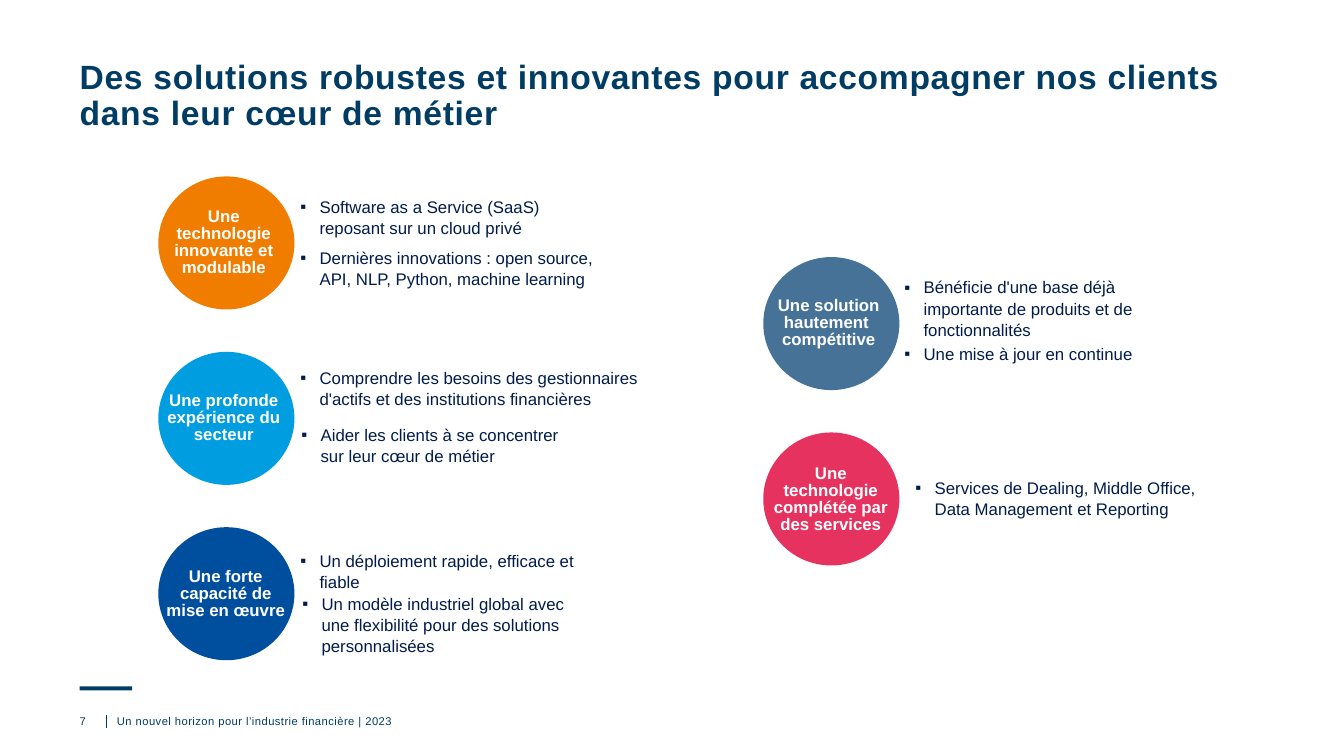
from lxml import etree
from pptx import Presentation
from pptx.dml.color import RGBColor
from pptx.enum.shapes import MSO_CONNECTOR, MSO_SHAPE
from pptx.enum.text import MSO_ANCHOR, PP_ALIGN
from pptx.oxml.ns import qn
from pptx.util import Inches, Pt

OVAL, RECTANGLE = MSO_SHAPE.OVAL, MSO_SHAPE.RECTANGLE
STRAIGHT = MSO_CONNECTOR.STRAIGHT
TOP, MIDDLE = MSO_ANCHOR.TOP, MSO_ANCHOR.MIDDLE
LEFT, CENTER = PP_ALIGN.LEFT, PP_ALIGN.CENTER

COLORS = {
    "navy": "003C64", "text": "001C4B", "white": "FFFFFF",
    "orange": "F07D00", "sky": "009EE0", "blue": "004F9F",
    "slate": "457296", "pink": "E6325E",
}
CIRCLE_WIDTH, CIRCLE_HEIGHT = 1.35, 1.32
ROW_STEP = 1.74
LEFT_COLUMN, RIGHT_COLUMN = (1.57, 1.75), (7.57, 2.55)
BULLET_INDENT = 0.19

# Label and bullet boxes are (left, top, width, height) from the circle corner.
LEFT_TOPICS = [
    ("orange", "Une technologie innovante et modulable", (0.08, 0.34, 1.14, 0.64), [
        ("Software as a Service (SaaS) reposant sur un cloud privé", (1.41, 0.19, 3, 0.45)),
        ("Dernières innovations : open source, API, NLP, Python, machine learning",
         (1.41, 0.7, 3.06, 0.44)),
    ]),
    ("sky", "Une profonde expérience du secteur", (0.08, 0.34, 1.14, 0.64), [
        ("Comprendre les besoins des gestionnaires d'actifs et des institutions financières",
         (1.41, 0.15, 3.43, 0.45)),
        ("Aider les clients à se concentrer sur leur cœur de métier", (1.42, 0.71, 2.63, 0.44)),
    ]),
    ("blue", "Une forte capacité de mise en œuvre", (0.04, 0.35, 1.26, 0.64), [
        ("Un déploiement rapide, efficace et fiable", (1.41, 0.22, 3.06, 0.33)),
        ("Un modèle industriel global avec une flexibilité pour des solutions personnalisées",
         (1.43, 0.65, 2.9, 0.6)),
    ]),
]
RIGHT_TOPICS = [
    ("slate", "Une solution hautement \ncompétitive", (0.08, 0.34, 1.14, 0.64), [
        ("Bénéficie d'une base déjà importante de produits et de fonctionnalités",
         (1.4, 0.19, 2.89, 0.45)),
        ("Une mise à jour en continue", (1.4, 0.85, 2.89, 0.44)),
    ]),
    ("pink", "Une technologie complétée par des services", (0.1, 0.35, 1.14, 0.64), [
        ("Services de Dealing, Middle Office, Data Management et Reporting",
         (1.51, 0.44, 2.89, 0.45)),
    ]),
]


def color(name):
    return RGBColor.from_string(COLORS[name])


def add_bullet(para):
    properties = para._p.get_or_add_pPr()
    indent = Inches(BULLET_INDENT)
    properties.set("marL", str(indent))
    properties.set("indent", str(-indent))
    etree.SubElement(properties, qn("a:buFont")).set("typeface", "Arial")
    etree.SubElement(properties, qn("a:buChar")).set("char", "▪")


def add_text(page, box, text, color_name, size, bold=False, align=LEFT,
             anchor=TOP, line_spacing=1.0, tracking=0, bullet=False):
    """Write text without insets; tracking is in hundredths of a point."""
    frame = page.shapes.add_textbox(*map(Inches, box)).text_frame
    settings = {"word_wrap": True, "vertical_anchor": anchor, "margin_left": 0,
                "margin_right": 0, "margin_top": 0, "margin_bottom": 0}
    for name, value in settings.items():
        setattr(frame, name, value)
    frame.text = text
    for para in frame.paragraphs:
        para.alignment = align
        para.line_spacing = line_spacing
        if bullet:
            add_bullet(para)
        for span in para.runs:
            for name, value in {"name": "Arial", "size": Pt(size), "bold": bold}.items():
                setattr(span.font, name, value)
            span.font.color.rgb = color(color_name)
            if tracking:
                span._r.get_or_add_rPr().set("spc", str(tracking))


def add_filled(page, kind, box, color_name):
    shape = page.shapes.add_shape(kind, *map(Inches, box))
    shape.shadow.inherit = False
    shape.fill.solid()
    shape.fill.fore_color.rgb = color(color_name)
    shape.line.fill.background()


def add_topic(page, left, top, topic):
    """Place one circle with its label and its bullets."""
    fill, label, label_box, bullets = topic

    def shifted(box):
        return (left + box[0], top + box[1], box[2], box[3])

    add_filled(page, OVAL, (left, top, CIRCLE_WIDTH, CIRCLE_HEIGHT), fill)
    add_text(page, shifted(label_box), label, "white", 12, bold=True,
             align=CENTER, anchor=MIDDLE, line_spacing=Pt(12))
    for text, box in bullets:
        add_text(page, shifted(box), text, "text", 12, line_spacing=1.05, bullet=True)


def add_column(page, origin, topics):
    left, top = origin
    for row, topic in enumerate(topics):
        add_topic(page, left, top + row * ROW_STEP, topic)


def add_footer(page, left, top):
    add_filled(page, RECTANGLE, (left, top, 0.52, 0.04), "navy")
    text_top = top + 0.28
    add_text(page, (left, text_top, 0.26, 0.2), "7", "navy", 8)
    divider = page.shapes.add_connector(
        STRAIGHT, *map(Inches, (left + 0.26, text_top, left + 0.26, text_top + 0.13)))
    divider.line.color.rgb = color("navy")
    divider.line.width = Pt(0.5)
    etree.SubElement(divider._element.spPr, qn("a:effectLst"))
    add_text(page, (left + 0.37, text_top, 7.6, 0.2),
             "Un nouvel horizon pour l’industrie financière | 2023", "navy", 8, tracking=30)


def main():
    deck = Presentation()
    deck.slide_width, deck.slide_height = Inches(13.33), Inches(7.5)
    page = deck.slides.add_slide(deck.slide_layouts[6])
    add_text(page, (0.79, 0.6, 11.43, 0.42),
             "Des solutions robustes et innovantes pour accompagner nos clients "
             "dans leur cœur de métier",
             "navy", 24, bold=True, line_spacing=0.9, tracking=50)
    add_column(page, LEFT_COLUMN, LEFT_TOPICS)
    add_column(page, RIGHT_COLUMN, RIGHT_TOPICS)
    add_footer(page, 0.79, 6.81)
    deck.save("out.pptx")


if __name__ == "__main__":
    main()
